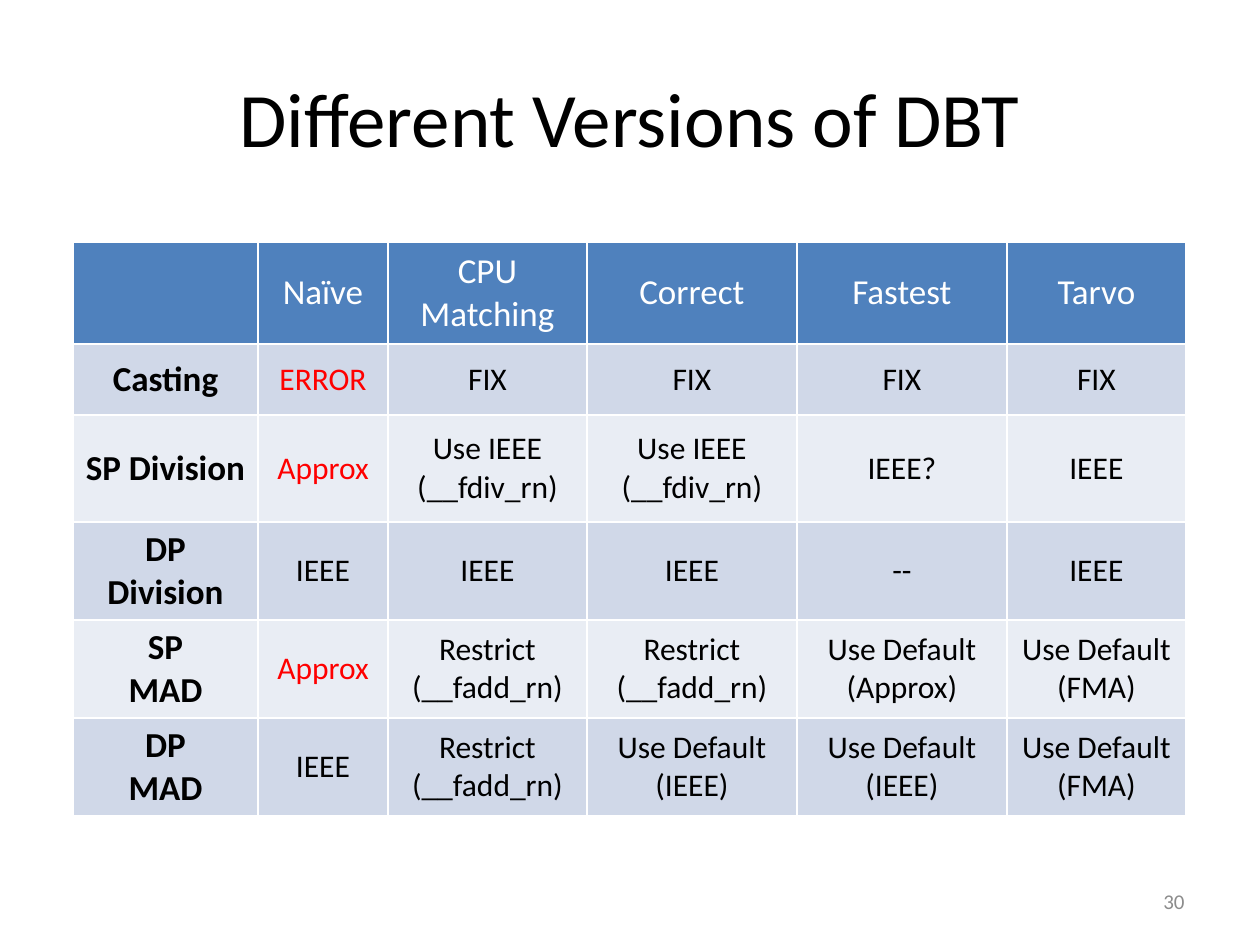
"""Build the slide that compares the versions of DBT in a table."""
from lxml import etree
from pptx import Presentation
from pptx import util as u
from pptx.dml.color import RGBColor
from pptx.enum import text
from pptx.oxml.ns import qn

PX = u.Inches(1) / 126
FONT = "Calibri"
BLACK = RGBColor(0, 0, 0)
WHITE = RGBColor(255, 255, 255)
RED = RGBColor(255, 0, 0)
GRAY = RGBColor(0x8C, 0x8C, 0x8C)
BLUE = RGBColor(0x4F, 0x81, 0xBD)
BANDS = (RGBColor(0xE9, 0xED, 0xF4), RGBColor(0xD0, 0xD8, 0xE8))

TITLE = "Different Versions of DBT"
PAGE = "30"
ROWS = [
    ["", "Naïve", "CPU Matching", "Correct", "Fastest", "Tarvo"],
    ["Casting", "ERROR", "FIX", "FIX", "FIX", "FIX"],
    ["SP Division", "Approx", "Use IEEE (__fdiv_rn)", "Use IEEE (__fdiv_rn)", "IEEE?", "IEEE"],
    ["DP\nDivision", "IEEE", "IEEE", "IEEE", "--", "IEEE"],
    ["SP\nMAD", "Approx", "Restrict\n(__fadd_rn)", "Restrict\n(__fadd_rn)",
     "Use Default (Approx)", "Use Default\n(FMA)"],
    ["DP\nMAD", "IEEE", "Restrict\n(__fadd_rn)", "Use Default\n(IEEE)",
     "Use Default\n(IEEE)", "Use Default\n(FMA)"],
]
WARNINGS = ("ERROR", "Approx")
COLUMN_WIDTHS = (185, 130, 199, 210, 210, 179)
ROW_HEIGHTS = (102, 71, 107, 98, 98, 98)
TITLE_BOX = (63, 38, 1134, 158)
PAGE_BOX = (903, 876, 294, 50)
TABLE_LEFT, TABLE_TOP = 73, 242


def px(length):
    return u.Emu(round(length * PX))


def write(frame, content, size, color, align=text.PP_ALIGN.CENTER, bold=False):
    for index, line in enumerate(content.split("\n")):
        paragraph = frame.add_paragraph() if index else frame.paragraphs[0]
        paragraph.alignment = align
        run = paragraph.add_run()
        run.text = line
        run.font.name = FONT
        run.font.size = u.Pt(size)
        run.font.bold = bold
        run.font.color.rgb = color


def add_borders(cell):
    properties = cell._tc.get_or_add_tcPr()
    for side in "LRTB":
        line = etree.SubElement(properties, qn(f"a:ln{side}"), w=str(u.Pt(1)))
        fill = etree.SubElement(line, qn("a:solidFill"))
        etree.SubElement(fill, qn("a:srgbClr"), val=str(WHITE))


def format_cell(cell, content, row, column):
    header = row == 0
    label = column == 0
    add_borders(cell)
    cell.fill.solid()
    cell.fill.fore_color.rgb = BLUE if header else BANDS[row % 2]
    cell.vertical_anchor = text.MSO_ANCHOR.MIDDLE
    if content:
        color = WHITE if header else RED if content in WARNINGS else BLACK
        write(cell.text_frame, content, 20 if header or label else 18, color, bold=label)


def add_version_table(slide):
    frame = slide.shapes.add_table(
        len(ROWS), len(COLUMN_WIDTHS), px(TABLE_LEFT), px(TABLE_TOP),
        px(sum(COLUMN_WIDTHS)), px(sum(ROW_HEIGHTS)))
    table = frame.table
    for column, width in zip(table.columns, COLUMN_WIDTHS):
        column.width = px(width)
    for row, height in zip(table.rows, ROW_HEIGHTS):
        row.height = px(height)
    for row, contents in enumerate(ROWS):
        for column, content in enumerate(contents):
            format_cell(table.cell(row, column), content, row, column)


def main():
    presentation = Presentation()
    presentation.slide_width = u.Inches(10)
    presentation.slide_height = u.Inches(7.5)
    slide = presentation.slides.add_slide(presentation.slide_layouts.get_by_name("Title Only"))

    title = slide.shapes.title
    title.left, title.top, title.width, title.height = map(px, TITLE_BOX)
    title.text_frame.vertical_anchor = text.MSO_ANCHOR.MIDDLE
    write(title.text_frame, TITLE, 44, BLACK)

    page = slide.shapes.add_textbox(*map(px, PAGE_BOX)).text_frame
    page.word_wrap = True
    page.vertical_anchor = text.MSO_ANCHOR.MIDDLE
    write(page, PAGE, 12, GRAY, text.PP_ALIGN.RIGHT)

    add_version_table(slide)
    presentation.save("out.pptx")


if __name__ == "__main__":
    main()
